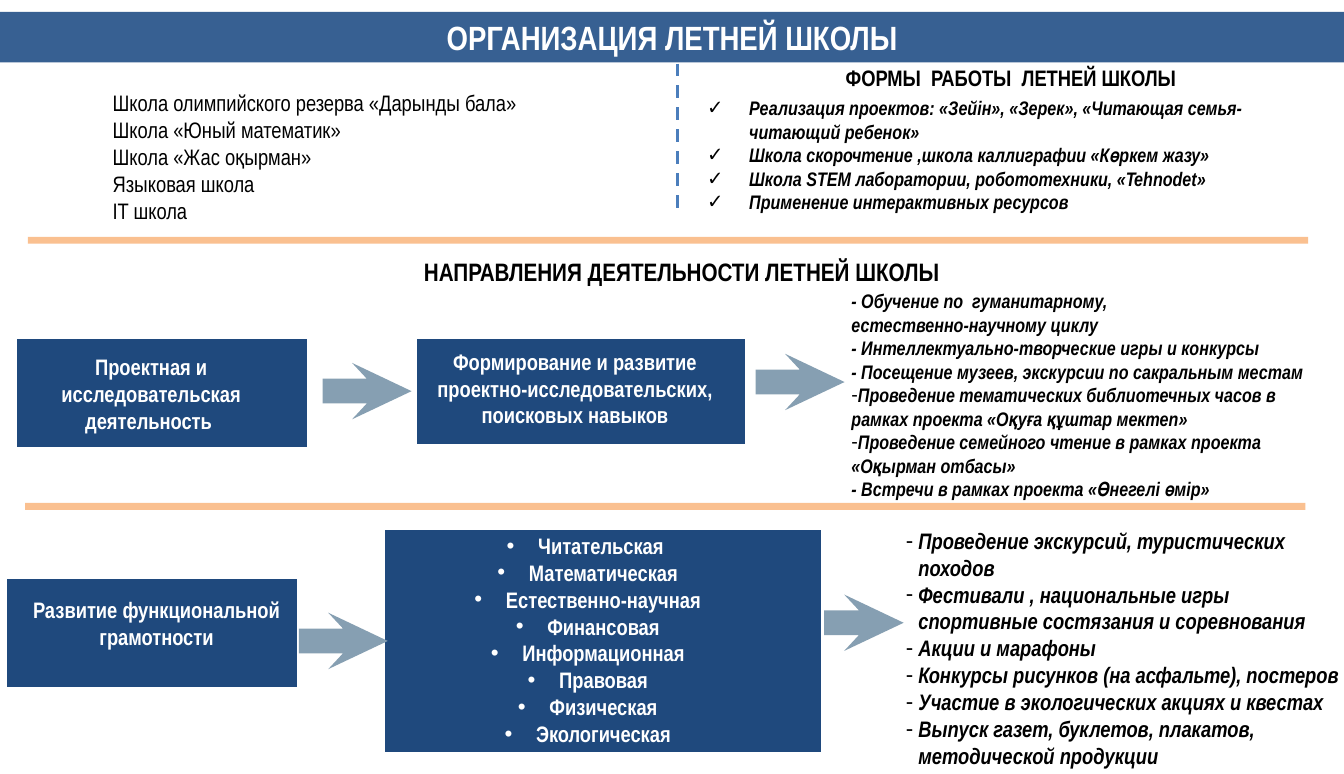
from dataclasses import dataclass

from lxml.etree import SubElement
from pptx import Presentation
from pptx.dml.color import RGBColor
from pptx.enum.dml import MSO_LINE
from pptx.enum.shapes import MSO_CONNECTOR, MSO_SHAPE
from pptx.enum.text import MSO_ANCHOR, MSO_AUTO_SIZE, PP_ALIGN
from pptx.oxml.ns import qn
from pptx.shapes.autoshape import Shape
from pptx.slide import Slide
from pptx.text.text import TextFrame
from pptx.util import Pt

FONT = "Arial Narrow"
BLACK = RGBColor(0x00, 0x00, 0x00)
WHITE = RGBColor(0xFF, 0xFF, 0xFF)
TITLE_BLUE = RGBColor(0x37, 0x60, 0x92)
NAVY = RGBColor(0x1F, 0x49, 0x7D)
PEACH = RGBColor(0xFA, 0xC0, 0x90)
STEEL = RGBColor(0x86, 0x9F, 0xB2)
DASH_BLUE = RGBColor(0x4B, 0x7E, 0xBC)

INSET = 7
WIDTH, HEIGHT = 960, 553
ARROW_OUTLINE = [(0, 0), (10.5, 11.3), (-21, 11.3), (-21, 29), (10.5, 29), (0, 40.3), (42.5, 20.2)]


@dataclass(frozen=True)
class Style:
    size: float = 16
    color: RGBColor = BLACK
    bold: bool = True
    italic: bool = False
    align: PP_ALIGN = PP_ALIGN.LEFT
    indent: float = 0


@dataclass(frozen=True)
class Box:
    left: float
    top: float
    width: float
    height: float
    fill: RGBColor
    outlined: bool = False


@dataclass(frozen=True)
class Line:
    text: str
    bullet: str = ""


@dataclass(frozen=True)
class TextBlock:
    left: float
    top: float
    width: float
    height: float
    lines: list[Line]
    style: Style
    right_inset: float = INSET
    wrap: bool = True


@dataclass(frozen=True)
class Arrow:
    notch: float
    top: float


def lines_of(*texts: str, bullet: str = "") -> list[Line]:
    return [Line(text, bullet) for text in texts]


CENTERED = Style(align=PP_ALIGN.CENTER)
ON_NAVY = Style(color=WHITE, align=PP_ALIGN.CENTER)
SKILLS = Style(color=WHITE, align=PP_ALIGN.CENTER, indent=22.5)
NOTE = Style(size=14, italic=True)
FORMS = Style(size=14, italic=True, indent=30)
ACTIVITIES = Style(italic=True, indent=9)
SCHOOLS = Style(bold=False, align=PP_ALIGN.JUSTIFY)
HEADING = Style(size=18, align=PP_ALIGN.CENTER)
TITLE = Style(size=24, color=WHITE, align=PP_ALIGN.CENTER)

TITLE_BAR = Box(0, 8.6, WIDTH, 36, TITLE_BLUE)
BOXES = [
    Box(20, 169.2, 914.4, 5, PEACH),
    Box(18, 359.3, 914.4, 5, PEACH),
    Box(11, 241.5, 209, 79, NAVY, True),
    Box(296.5, 241.5, 237, 77, NAVY, True),
    Box(4, 413, 209, 79, NAVY, True),
    Box(274, 377.5, 313.5, 161, NAVY, True),
]
ARROW_BEHIND_SKILLS = Arrow(603, 424.8)
ARROWS = [Arrow(251.5, 259.3), Arrow(560.8, 252.8), Arrow(234.5, 437.8)]
BLOCKS = [
    TextBlock(73.5, 60.5, 369, 124, lines_of(
        "Школа олимпийского резерва «Дарынды бала»",
        "Школа «Юный математик»",
        "Школа «Жас оқырман»",
        "Языковая школа",
        "IT школа "), SCHOOLS),
    TextBlock(594, 42, 260, 26.5, lines_of("ФОРМЫ  РАБОТЫ  ЛЕТНЕЙ ШКОЛЫ "), CENTERED, wrap=False),
    TextBlock(498.2, 65, 460.8, 92, lines_of(
        "Реализация проектов: «Зейін», «Зерек», «Читающая семья-читающий ребенок»",
        "Школа скорочтение ,школа каллиграфии «Көркем жазу»",
        "Школа STEM лаборатории, робототехники, «Tehnodet»",
        "Применение интерактивных ресурсов", bullet="✓"), FORMS, right_inset=20),
    TextBlock(226.8, 179.3, 520.5, 29, lines_of("НАПРАВЛЕНИЯ ДЕЯТЕЛЬНОСТИ ЛЕТНЕЙ ШКОЛЫ"), HEADING),
    TextBlock(13.7, 249, 188.6, 65.5, lines_of(
        "Проектная и исследовательская деятельность "), ON_NAVY),
    TextBlock(283.7, 245, 254, 65.5, lines_of(
        "Формирование и развитие проектно-исследовательских, поисковых навыков"), ON_NAVY),
    TextBlock(601.2, 203, 357.8, 160, [
        *lines_of(
            "- Обучение по  гуманитарному,",
            "естественно-научному циклу",
            "- Интеллектуально-творческие игры и конкурсы",
            "- Посещение музеев, экскурсии по сакральным местам"),
        *lines_of(
            "Проведение тематических библиотечных часов в рамках проекта «Оқуға құштар мектеп»",
            "Проведение семейного чтение в рамках проекта «Оқырман отбасы»", bullet="-"),
        Line("- Встречи в рамках проекта «Өнегелі өмір»")], NOTE, right_inset=12),
    TextBlock(1.4, 422.6, 221, 46, lines_of("Развитие функциональной грамотности"), ON_NAVY),
    TextBlock(260, 376.6, 319.7, 181.5, lines_of(
        "Читательская ", "Математическая", "Естественно-научная", "Финансовая",
        "Информационная", "Правовая", "Физическая", "Экологическая", bullet="•"), SKILLS),
    TextBlock(640, 373, 326.2, 181.5, lines_of(
        "Проведение экскурсий, туристических походов",
        "Фестивали , национальные игры спортивные состязания и соревнования",
        "Акции и марафоны",
        "Конкурсы рисунков (на асфальте), постеров",
        "Участие в экологических акциях и квестах",
        "Выпуск газет, буклетов, плакатов, методической продукции",
        bullet="-"), ACTIVITIES, right_inset=8.7),
]


def write(tf: TextFrame, lines: list[Line], style: Style) -> None:
    for i, line in enumerate(lines):
        p = tf.paragraphs[0] if i == 0 else tf.add_paragraph()
        p.alignment = style.align
        if line.bullet:
            pPr = p._p.get_or_add_pPr()
            pPr.set("marL", str(Pt(style.indent)))
            pPr.set("indent", str(Pt(-style.indent)))
            SubElement(pPr, qn("a:buFont")).set("typeface", "Arial")
            SubElement(pPr, qn("a:buChar")).set("char", line.bullet)
        r = p.add_run()
        r.text = line.text
        r.font.name = FONT
        r.font.size = Pt(style.size)
        r.font.bold = style.bold
        r.font.italic = style.italic
        r.font.color.rgb = style.color


def add_box(slide: Slide, box: Box) -> Shape:
    sp = slide.shapes.add_shape(
        MSO_SHAPE.RECTANGLE, Pt(box.left), Pt(box.top), Pt(box.width), Pt(box.height))
    sp.shadow.inherit = False
    sp.fill.solid()
    sp.fill.fore_color.rgb = box.fill
    if box.outlined:
        sp.line.color.rgb = WHITE
        sp.line.width = Pt(2)
    else:
        sp.line.fill.background()
    return sp


def add_arrow(slide: Slide, arrow: Arrow) -> None:
    points = [(Pt(arrow.notch + x), Pt(arrow.top + y)) for x, y in ARROW_OUTLINE]
    builder = slide.shapes.build_freeform(*points[0])
    builder.add_line_segments(points[1:], close=True)
    sp = builder.convert_to_shape()
    sp.shadow.inherit = False
    sp.fill.solid()
    sp.fill.fore_color.rgb = STEEL
    sp.line.fill.background()


def add_divider(slide: Slide) -> None:
    line = slide.shapes.add_connector(
        MSO_CONNECTOR.STRAIGHT, Pt(483.8), Pt(45.4), Pt(483.8), Pt(152.6))
    line.line.color.rgb = DASH_BLUE
    line.line.width = Pt(2.25)
    line.line.dash_style = MSO_LINE.DASH
    SubElement(line._element.spPr, qn("a:effectLst"))


def add_text(slide: Slide, block: TextBlock) -> None:
    sp = slide.shapes.add_textbox(
        Pt(block.left), Pt(block.top), Pt(block.width), Pt(block.height))
    tf = sp.text_frame
    tf.word_wrap = block.wrap
    tf.auto_size = MSO_AUTO_SIZE.SHAPE_TO_FIT_TEXT
    tf.margin_left = Pt(INSET)
    tf.margin_right = Pt(block.right_inset)
    write(tf, block.lines, block.style)


def main() -> None:
    prs = Presentation()
    prs.slide_width, prs.slide_height = Pt(WIDTH), Pt(HEIGHT)
    slide = prs.slides.add_slide(prs.slide_layouts[6])
    title = add_box(slide, TITLE_BAR)
    title.text_frame.vertical_anchor = MSO_ANCHOR.MIDDLE
    write(title.text_frame, lines_of("ОРГАНИЗАЦИЯ ЛЕТНЕЙ ШКОЛЫ"), TITLE)
    add_arrow(slide, ARROW_BEHIND_SKILLS)
    for box in BOXES:
        add_box(slide, box)
    for arrow in ARROWS:
        add_arrow(slide, arrow)
    add_divider(slide)
    for block in BLOCKS:
        add_text(slide, block)
    prs.save("out.pptx")


if __name__ == "__main__":
    main()
